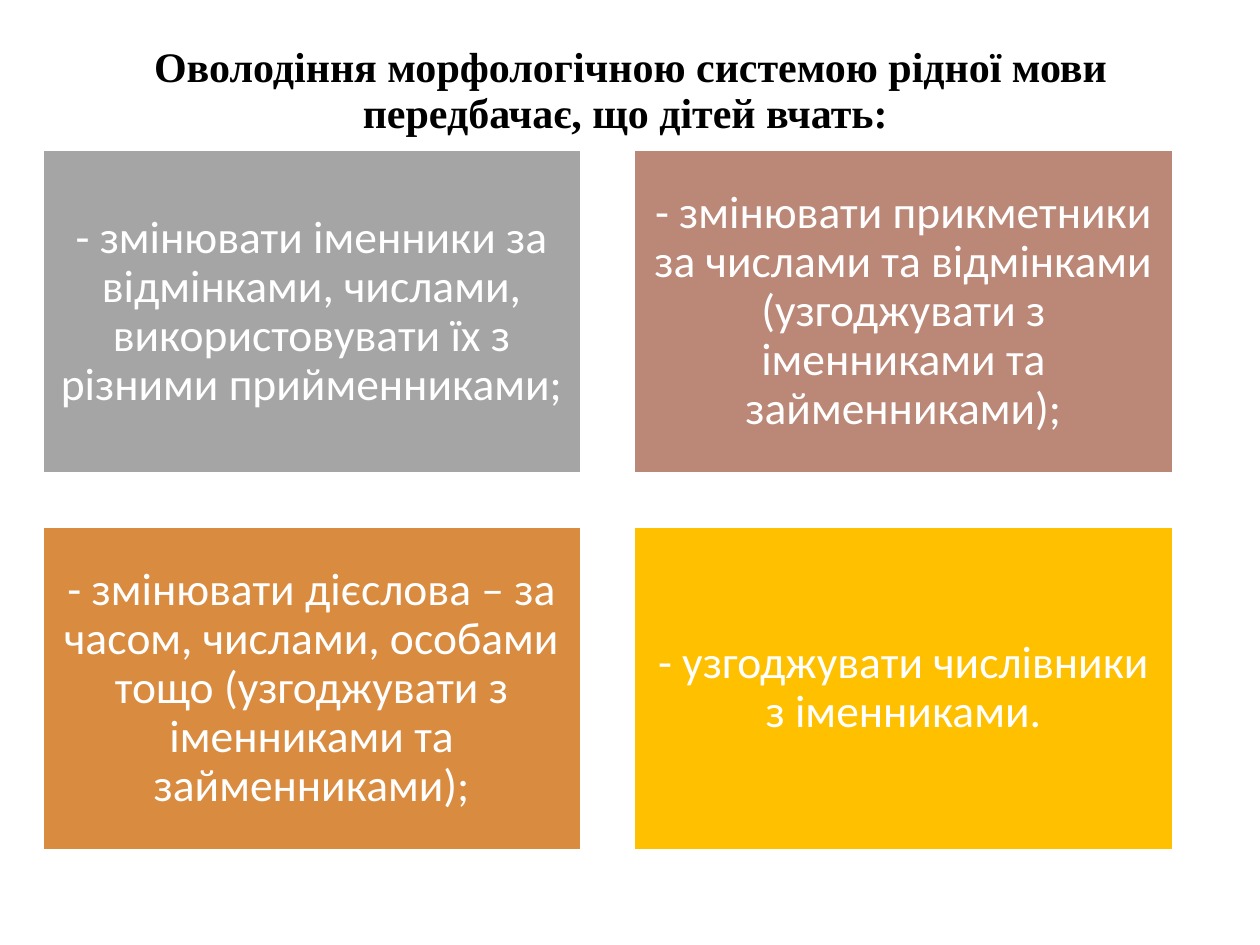
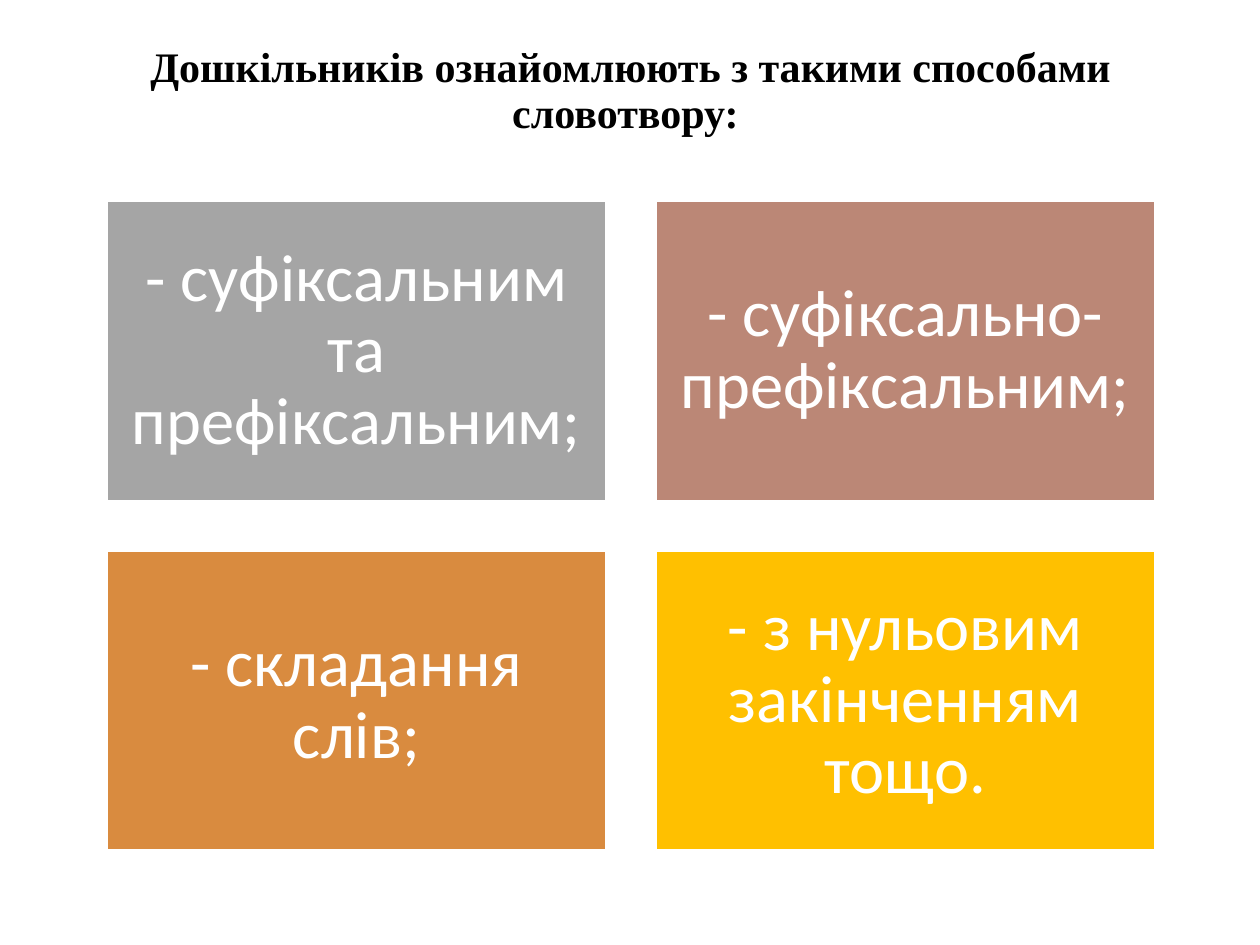
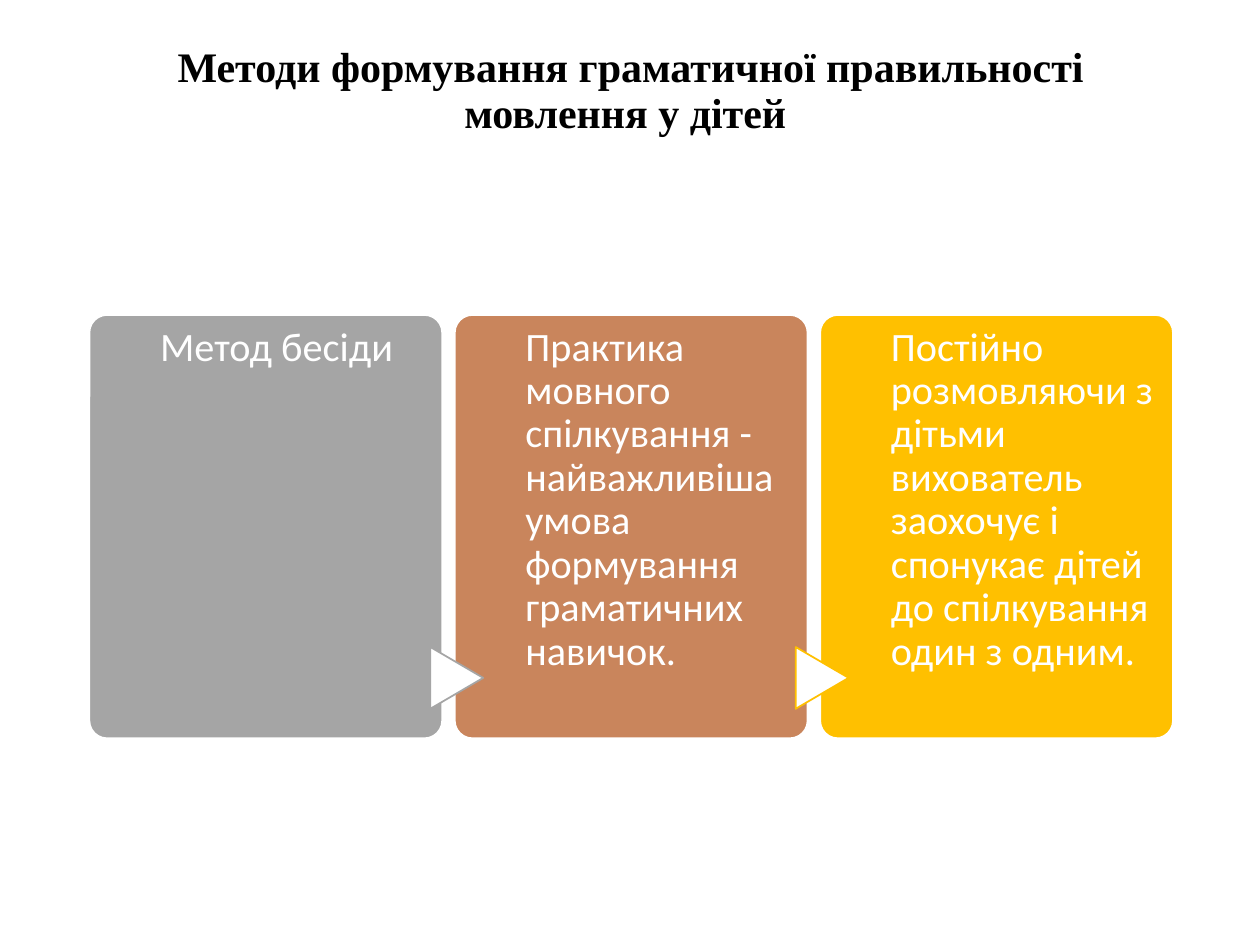
from pptx import Presentation
from pptx.dml.color import RGBColor
from pptx.enum.shapes import MSO_SHAPE
from pptx.enum.text import MSO_ANCHOR, PP_ALIGN
from pptx.util import Inches, Pt

RECTANGLE = MSO_SHAPE.RECTANGLE
ROUNDED = MSO_SHAPE.ROUNDED_RECTANGLE
TRIANGLE = MSO_SHAPE.FLOWCHART_EXTRACT
TOP, MIDDLE = MSO_ANCHOR.TOP, MSO_ANCHOR.MIDDLE
LEFT, CENTER = PP_ALIGN.LEFT, PP_ALIGN.CENTER

BLACK = RGBColor(0x00, 0x00, 0x00)
WHITE = RGBColor(0xFF, 0xFF, 0xFF)
GRAY = RGBColor(0xA5, 0xA5, 0xA5)
ROSE = RGBColor(0xBB, 0x87, 0x76)
ORANGE = RGBColor(0xD9, 0x8B, 0x3F)
GOLD = RGBColor(0xFF, 0xC0, 0x00)
COPPER = RGBColor(0xC9, 0x85, 0x5C)

COLUMNS = 100
TITLE_FONT, BODY_FONT = "Times New Roman", "Calibri"


class Deck:
    """Style and current slide; lengths are cells of a 100 by 75 grid."""

    def __init__(self):
        self.presentation = Presentation()
        self.presentation.slide_width = Inches(10)
        self.presentation.slide_height = Inches(7.5)
        self.cell = self.presentation.slide_width / COLUMNS
        self.slide = None

    def cells(self, *lengths):
        return [round(length * self.cell) for length in lengths]

    def new_slide(self, title):
        layout = self.presentation.slide_layouts[6]
        self.slide = self.presentation.slides.add_slide(layout)
        box = self.text_box(7.2, 0, 85.7, 14.6)
        self.add_text(box, title, 24, (1, 0.5, 1, 0.5), font=TITLE_FONT,
                      color=BLACK, bold=True)

    def text_box(self, *bounds):
        return self.slide.shapes.add_textbox(*self.cells(*bounds))

    def shape(self, kind, bounds, fill, line=WHITE):
        shape = self.slide.shapes.add_shape(kind, *self.cells(*bounds))
        shape.shadow.inherit = False
        shape.fill.solid()
        shape.fill.fore_color.rgb = fill
        shape.line.color.rgb = line
        shape.line.width = Pt(1)
        return shape

    def add_text(self, shape, text, size, margins, align=CENTER, anchor=MIDDLE,
                 font=BODY_FONT, color=WHITE, bold=False):
        frame = shape.text_frame
        frame.word_wrap = True
        frame.vertical_anchor = anchor
        (frame.margin_left, frame.margin_top,
         frame.margin_right, frame.margin_bottom) = self.cells(*margins)
        paragraph = frame.paragraphs[0]
        paragraph.alignment = align
        paragraph.line_spacing = 0.9
        run = paragraph.add_run()
        run.text = text
        run.font.name = font
        run.font.size = Pt(size)
        run.font.bold = bold
        run.font.color.rgb = color

    def card_grid(self, left, top, width, size, margin, texts):
        """Two by two cards, 5:3 in shape, a tenth of a width apart."""
        height, gap = width * 0.6, width * 0.1
        fills = (GRAY, ROSE, ORANGE, GOLD)
        for index, (text, fill) in enumerate(zip(texts, fills)):
            row, column = divmod(index, 2)
            bounds = (left + column * (width + gap),
                      top + row * (height + gap), width, height)
            card = self.shape(RECTANGLE, bounds, fill)
            self.add_text(card, text, size, (margin,) * 4)

    def step_row(self, left, top, width, height, texts):
        """Rounded panels in a row, with a triangle over each gap."""
        fills = (GRAY, COPPER, GOLD)
        triangle_lines = (None, GRAY, GOLD)
        for index, text in enumerate(texts):
            x = left + index * (width + 1)
            panel = self.shape(ROUNDED, (x, top, width, height), fills[index])
            panel.adjustments[0] = 0.05
            if index:
                triangle = self.shape(TRIANGLE, (x - 2.3, top + 26.7, 4.9, 4.2),
                                      WHITE, triangle_lines[index])
                triangle.rotation = 90
            label = self.text_box(x + width * 0.2, top, 20.9, height)
            self.add_text(label, text, 23, (0, 0.9, 0, 0), LEFT, TOP)


def main():
    deck = Deck()

    deck.new_slide("Оволодіння морфологічною системою рідної мови "
                   "передбачає, що дітей вчать: ")
    deck.card_grid(3.4, 11.95, 42.7, 26, 1.1, (
        "- змінювати іменники за відмінками, числами, використовувати їх "
        "з різними прийменниками;",
        "- змінювати прикметники за числами та відмінками (узгоджувати з "
        "іменниками та займенниками);",
        "- змінювати дієслова – за часом, числами, особами тощо "
        "(узгоджувати з іменниками та займенниками);",
        "- узгоджувати числівники з іменниками.",
    ))

    deck.new_slide("Дошкільників ознайомлюють з такими способами словотвору: ")
    deck.card_grid(8.5, 16, 39.6, 38, 1.6, (
        "- суфіксальним та префіксальним;",
        "- суфіксально-префіксальним;",
        "- складання слів;",
        "- з нульовим закінченням тощо.",
    ))

    deck.new_slide("Методи формування граматичної правильності "
                   "мовлення у дітей ")
    deck.step_row(7.1, 25, 28, 33.6, (
        "Метод бесіди",
        "Практика мовного спілкування - найважливіша умова формування "
        "граматичних навичок.",
        "Постійно розмовляючи з дітьми вихователь заохочує і спонукає "
        "дітей до спілкування один з одним.",
    ))

    deck.presentation.save("out.pptx")


if __name__ == "__main__":
    main()
